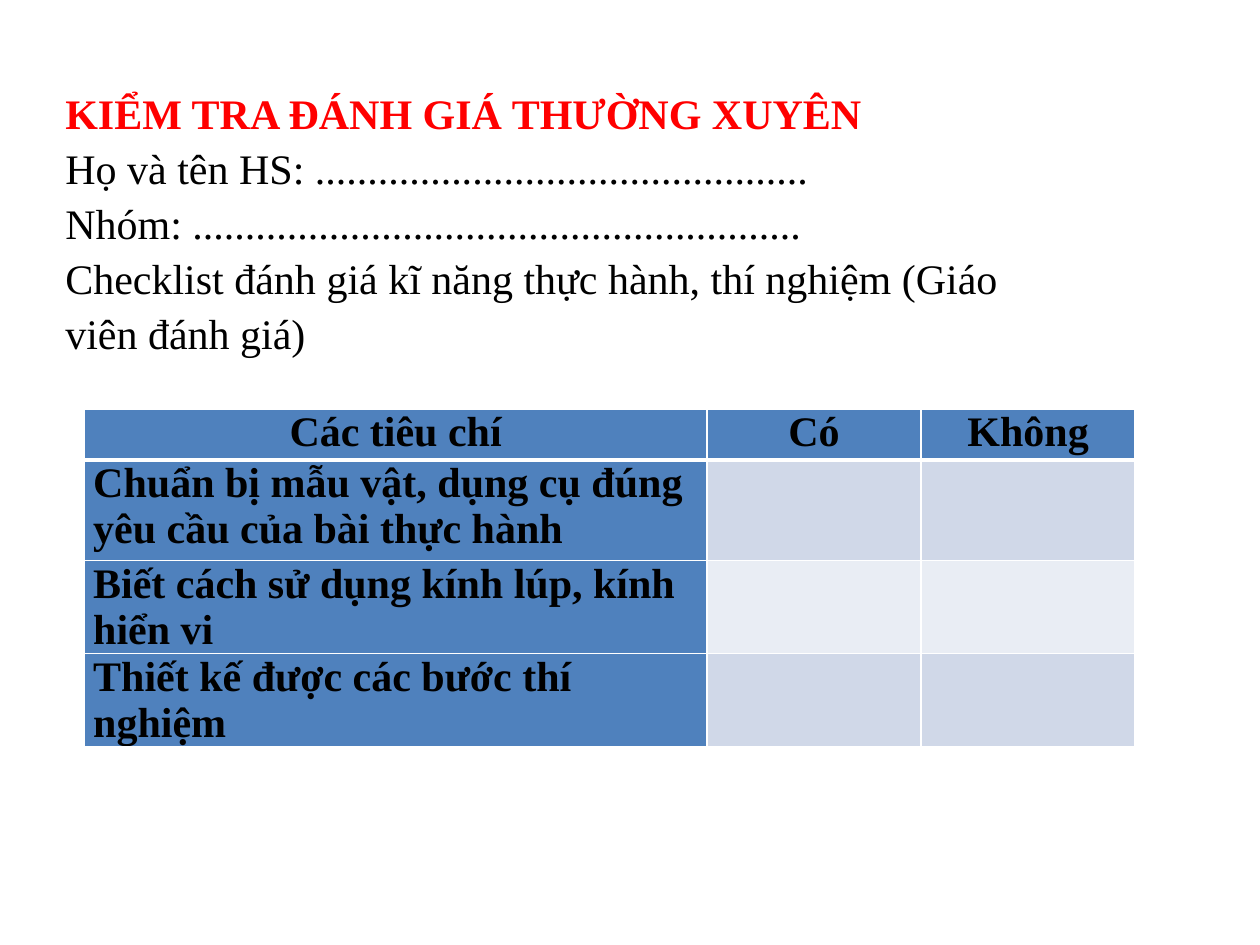
from dataclasses import dataclass
from lxml.etree import SubElement
from pptx import Presentation
from pptx.dml.color import RGBColor
from pptx.enum.text import MSO_ANCHOR, MSO_AUTO_SIZE, PP_ALIGN
from pptx.oxml.ns import qn
from pptx.util import Inches, Pt


@dataclass(frozen=True)
class Theme:
    font: str = "Times New Roman"
    size: int = 24
    text: str = "000000"
    heading: str = "FF0000"
    accent: str = "4F81BD"
    bands: tuple = ("D0D8E8", "E9EDF4")
    border: str = "FFFFFF"


theme = Theme()


def style_runs(p, color, bold):
    for r in p.runs:
        r.font.name = theme.font
        r.font.size = Pt(theme.size)
        r.font.bold = bold
        r.font.color.rgb = RGBColor.from_string(color)


def style_cell(cell, fill, bottom_width):
    """Draw the four cell borders, then the fill, which must follow them in the XML."""
    tcPr = cell._tc.get_or_add_tcPr()
    for side in ("L", "R", "T", "B"):
        width = bottom_width if side == "B" else 1
        ln = SubElement(tcPr, qn(f"a:ln{side}"), w=str(Pt(width)))
        SubElement(SubElement(ln, qn("a:solidFill")), qn("a:srgbClr"), val=theme.border)
    cell.fill.solid()
    cell.fill.fore_color.rgb = RGBColor.from_string(fill)


prs = Presentation()
prs.slide_width, prs.slide_height = Inches(10), Inches(7.5)
s = prs.slides.add_slide(prs.slide_layouts[6])

# Criteria table
rows = [
    ("Các tiêu chí", "Có", "Không"),
    ("Chuẩn bị mẫu vật, dụng cụ đúng yêu cầu của bài thực hành", "", ""),
    ("Biết cách sử dụng kính lúp, kính hiển vi", "", ""),
    ("Thiết kế được các bước thí nghiệm", "", ""),
]
col_widths = (4.94, 1.7, 1.7)
row_heights = (0.4, 0.8, 0.4, 0.4)
table = s.shapes.add_table(len(rows), len(col_widths), Inches(0.67), Inches(3.25),
                           Inches(sum(col_widths)), Inches(sum(row_heights))).table
table.first_col = True
for column, width in zip(table.columns, col_widths):
    column.width = Inches(width)
for i, (labels, height) in enumerate(zip(rows, row_heights)):
    table.rows[i].height = Inches(height)
    for j, label in enumerate(labels):
        cell = table.cell(i, j)
        is_header = i == 0 or j == 0
        style_cell(cell, theme.accent if is_header else theme.bands[(i - 1) % 2],
                   3 if i == 0 else 1)
        if not label:
            continue
        cell.margin_left = cell.margin_right = Inches(0.07)
        cell.margin_top = cell.margin_bottom = 0
        p = cell.text_frame.paragraphs[0]
        p.text = label
        p.alignment = PP_ALIGN.CENTER if i == 0 else PP_ALIGN.LEFT
        p.space_after = Pt(3)
        style_runs(p, theme.text, True)

# Heading and student details
lines = [
    "KIỂM TRA ĐÁNH GIÁ THƯỜNG XUYÊN",
    "Họ và tên HS: " + "." * 47,
    "Nhóm: " + "." * 58,
    "Checklist đánh giá kĩ năng thực hành, thí nghiệm (Giáo viên đánh giá)",
]
tf = s.shapes.add_textbox(Inches(0.42), Inches(0.69), Inches(8.25), Inches(2.12)).text_frame
tf.word_wrap = True
tf.auto_size = MSO_AUTO_SIZE.SHAPE_TO_FIT_TEXT
tf.vertical_anchor = MSO_ANCHOR.MIDDLE
tf.text = "\n".join(lines)
for i, p in enumerate(tf.paragraphs):
    p.line_spacing = 1.09
    style_runs(p, theme.heading if i == 0 else theme.text, i == 0)

prs.save("out.pptx")
